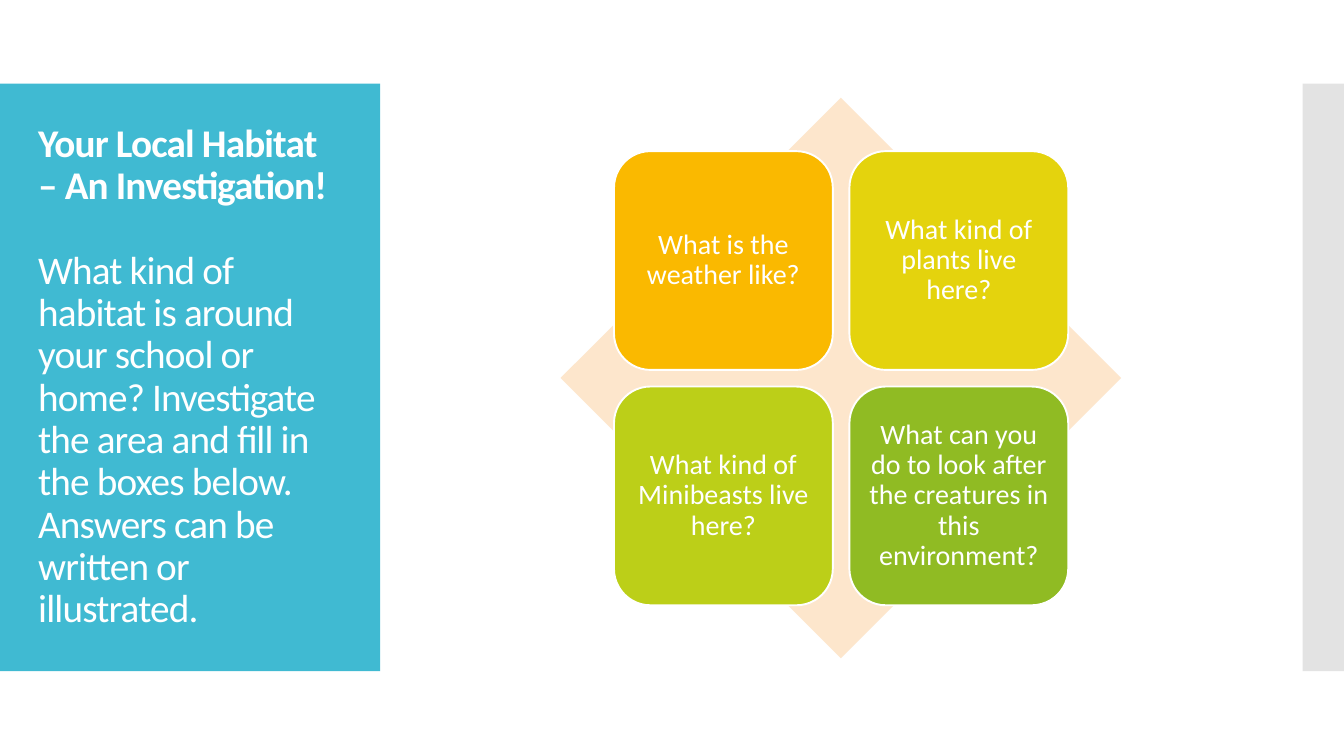
import pptx
import pptx.dml.color
import pptx.enum.shapes
import pptx.enum.text
import pptx.oxml.ns
import pptx.util
from lxml import etree

Inches = pptx.util.Inches
Pt = pptx.util.Pt
SHAPE = pptx.enum.shapes.MSO_SHAPE
ALIGN = pptx.enum.text.PP_ALIGN
ANCHOR = pptx.enum.text.MSO_ANCHOR

COLORS = {
    "white": "FFFFFF",
    "panel": "40BAD2",
    "strip": "C8C8C8",
    "diamond": "FDE6CC",
    "weather": "FAB900",
    "plants": "E4D30D",
    "minibeasts": "BCCF18",
    "care": "90BB23",
}

HEADING = "Your Local Habitat – An Investigation!"
TASK = ("What kind of habitat is around your school or home? Investigate the area "
        "and fill in the boxes below. Answers can be written or illustrated.")
QUESTIONS = [
    ("weather", "What is the weather like?"),
    ("plants", "What kind of plants live here?"),
    ("minibeasts", "What kind of Minibeasts live here?"),
    ("care", "What can you do to look after the creatures in this environment?"),
]
TILE_LEFT, TILE_TOP, TILE_SIZE, TILE_STEP = 6.09, 1.5, 2.17, 2.335


def rgb(name):
    return pptx.dml.color.RGBColor.from_string(COLORS[name])


def apply(obj, values):
    for name, value in values.items():
        setattr(obj, name, value)


def add_block(s, kind, left, top, width, height, color, outline=None):
    sp = s.shapes.add_shape(kind, Inches(left), Inches(top), Inches(width), Inches(height))
    sp.shadow.inherit = False
    sp.fill.solid()
    sp.fill.fore_color.rgb = rgb(color)
    if outline:
        sp.line.color.rgb = rgb(outline)
        sp.line.width = Pt(1.35)
    else:
        sp.line.fill.background()
    return sp


def set_alpha(sp, percent):
    clr = sp.fill._xPr.find(".//" + pptx.oxml.ns.qn("a:srgbClr"))
    etree.SubElement(clr, pptx.oxml.ns.qn("a:alpha"), val=str(percent * 1000))


def write(p, text, size, align, bold=False, after=0, tracking=0):
    apply(p, {"alignment": align, "line_spacing": 0.9, "space_after": Pt(after)})
    r = p.add_run()
    r.text = text
    apply(r.font, {"name": "Calibri", "size": Pt(size), "bold": bold})
    r.font.color.rgb = rgb("white")
    if tracking:
        r._r.get_or_add_rPr().set("spc", str(tracking))


def add_intro(s):
    tf = s.shapes.add_textbox(Inches(0.28), Inches(1.23), Inches(3.22), Inches(5.03)).text_frame
    apply(tf, {"word_wrap": True, "vertical_anchor": ANCHOR.MIDDLE})
    write(tf.paragraphs[0], HEADING, 28, ALIGN.LEFT, bold=True, after=30, tracking=-60)
    write(tf.add_paragraph(), TASK, 28, ALIGN.LEFT, tracking=-60)


def add_tile(s, index, color, question):
    row, col = divmod(index, 2)
    sp = add_block(s, SHAPE.ROUNDED_RECTANGLE, TILE_LEFT + col * TILE_STEP,
                   TILE_TOP + row * TILE_STEP, TILE_SIZE, TILE_SIZE, color, "white")
    tf = sp.text_frame
    apply(tf, {"word_wrap": True, "vertical_anchor": ANCHOR.MIDDLE})
    apply(tf, {f"margin_{side}": Inches(0.08) for side in ("left", "top", "right", "bottom")})
    write(tf.paragraphs[0], question, 20, ALIGN.CENTER)


def main():
    prs = pptx.Presentation()
    apply(prs, {"slide_width": Inches(13.33), "slide_height": Inches(7.5)})
    s = prs.slides.add_slide(prs.slide_layouts[6])

    # Side panels
    add_block(s, SHAPE.RECTANGLE, 0, 0.83, 3.77, 5.83, "panel")
    strip = add_block(s, SHAPE.RECTANGLE, 12.92, 0.83, 0.41, 5.83, "strip")
    set_alpha(strip, 50)
    add_intro(s)

    # Question grid over the diamond
    add_block(s, SHAPE.DIAMOND, 5.56, 0.97, 5.56, 5.56, "diamond")
    for index, (color, question) in enumerate(QUESTIONS):
        add_tile(s, index, color, question)

    prs.save("out.pptx")


if __name__ == "__main__":
    main()
